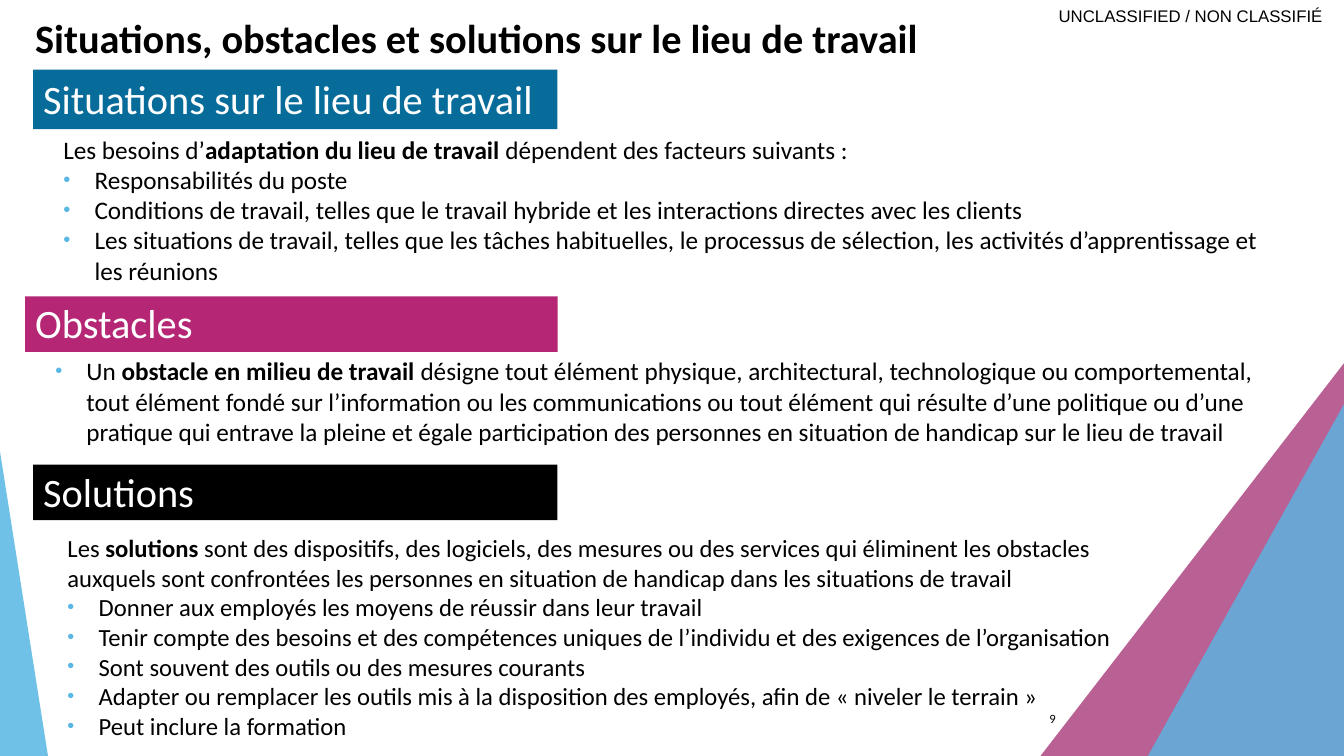
from lxml.etree import SubElement
from pptx import Presentation
from pptx.dml.color import RGBColor
from pptx.enum.shapes import MSO_SHAPE
from pptx.enum.text import MSO_ANCHOR, PP_ALIGN
from pptx.oxml.ns import qn
from pptx.util import Inches, Pt

COLORS = {
    "black": "000000",
    "white": "FFFFFF",
    "sky": "58B7E3",
    "plum": "9E246B",
    "teal": "086C9B",
    "magenta": "B52775",
}

SITUATIONS = [
    (False, [("Les besoins d’", False), ("adaptation du lieu de travail ", True),
             ("dépendent des facteurs suivants :", False)]),
    (True, [("Responsabilités du poste", False)]),
    (True, [("Conditions de travail, telles que le travail hybride et les interactions "
             "directes avec les clients", False)]),
    (True, [("Les situations de travail, telles que les tâches habituelles, le processus de "
             "sélection, les activités d’apprentissage et les réunions", False)]),
]
OBSTACLES = [
    (True, [("Un ", False), ("obstacle en milieu de travail ", True),
            ("désigne tout élément physique, architectural, technologique ou comportemental, "
             "tout élément fondé sur l’information ou les communications ou tout élément qui "
             "résulte d’une politique ou d’une pratique qui entrave la pleine et égale "
             "participation des personnes en situation de handicap sur le lieu de travail",
             False)]),
]
SOLUTIONS = [
    (False, [("Les ", False), ("solutions", True),
             (" sont des dispositifs, des logiciels, des mesures ou des services qui éliminent "
              "les obstacles auxquels sont confrontées les personnes en situation de handicap "
              "dans les situations de travail", False)]),
    (True, [("Donner aux employés les moyens de réussir dans leur travail", False)]),
    (True, [("Tenir compte des besoins et des compétences uniques de l’individu et des "
             "exigences de l’organisation", False)]),
    (True, [("Sont souvent des outils ou des mesures courants", False)]),
    (True, [("Adapter ou remplacer les outils mis à la disposition des employés, afin de "
             "« niveler le terrain »", False)]),
    (True, [("Peut inclure la formation", False)]),
]


def add_run(paragraph, text, size, color="black", bold=False, font="Calibri"):
    """Append one formatted run to a paragraph."""
    run = paragraph.add_run()
    run.text = text
    run.font.name = font
    run.font.size = Pt(size)
    run.font.bold = bold
    run.font.color.rgb = RGBColor.from_string(COLORS[color])


def add_bullet(paragraph):
    """Give a paragraph a hanging sky-blue bullet."""
    properties = paragraph._p.get_or_add_pPr()
    properties.set("marL", str(Inches(0.31)))
    properties.set("indent", str(Inches(-0.31)))
    bullet_color = SubElement(properties, qn("a:buClr"))
    SubElement(bullet_color, qn("a:srgbClr"), val=COLORS["sky"])
    SubElement(properties, qn("a:buSzPct"), val="80000")
    SubElement(properties, qn("a:buFont"), typeface="Arial")
    SubElement(properties, qn("a:buChar"), char="•")


def add_filled(slide, kind, box, color):
    """Draw a flat preset shape without outline."""
    figure = slide.shapes.add_shape(kind, *map(Inches, box))
    figure.shadow.inherit = False
    figure.fill.solid()
    figure.fill.fore_color.rgb = RGBColor.from_string(COLORS[color])
    figure.line.fill.background()
    return figure


def add_corner(slide, box, color, apex, opacity):
    """Draw a translucent decorative triangle."""
    corner = add_filled(slide, MSO_SHAPE.ISOSCELES_TRIANGLE, box, color)
    corner.adjustments[0] = apex
    hue = corner.fill._xPr.find(".//" + qn("a:srgbClr"))
    SubElement(hue, qn("a:alpha"), val=str(opacity * 1000))


def add_banner(slide, box, color, heading, anchor=MSO_ANCHOR.BOTTOM):
    """Draw a coloured section heading."""
    banner = add_filled(slide, MSO_SHAPE.RECTANGLE, box, color)
    frame = banner.text_frame
    frame.word_wrap = True
    frame.vertical_anchor = anchor
    frame.paragraphs[0].alignment = PP_ALIGN.LEFT
    add_run(frame.paragraphs[0], heading, 28.8, "white")


def add_frame(slide, box, anchor=MSO_ANCHOR.TOP):
    """Add a wrapping text box and return its text frame."""
    frame = slide.shapes.add_textbox(*map(Inches, box)).text_frame
    frame.word_wrap = True
    frame.vertical_anchor = anchor
    return frame


def add_label(slide, box, text, size, anchor, align, bold=False, font="Calibri", margin=0.1):
    """Add a single line of text."""
    frame = add_frame(slide, box, anchor)
    frame.margin_left = frame.margin_right = Inches(margin)
    frame.margin_top = frame.margin_bottom = Inches(margin / 2)
    frame.paragraphs[0].alignment = align
    add_run(frame.paragraphs[0], text, size, bold=bold, font=font)


def add_body(slide, box, content, size, before=0):
    """Add the paragraphs of a section, bulleted where asked."""
    frame = add_frame(slide, box)
    for index, (bulleted, runs) in enumerate(content):
        paragraph = frame.add_paragraph() if index else frame.paragraphs[0]
        paragraph.space_before = Pt(0 if index else before)
        if bulleted:
            add_bullet(paragraph)
        for text, bold in runs:
            add_run(paragraph, text, size, bold=bold)


def main():
    """Build and save the slide."""
    deck = Presentation()
    deck.slide_width, deck.slide_height = Inches(13.33), Inches(7.5)
    slide = deck.slides.add_slide(deck.slide_layouts[6])

    add_corner(slide, (10.25, 3.59, 3.09, 4), "plum", 1, 72)
    add_corner(slide, (11.34, 4.01, 1.99, 3.57), "sky", 1, 80)
    add_corner(slide, (0, 4.48, 0.49, 3.11), "sky", 0, 85)

    add_label(slide, (10.1, 0, 3.02, 0.31), "UNCLASSIFIED / NON CLASSIFIÉ", 12,
              MSO_ANCHOR.MIDDLE, PP_ALIGN.RIGHT, font="Arial", margin=0)
    add_label(slide, (0.25, 0.11, 9.29, 0.55),
              "Situations, obstacles et solutions sur le lieu de travail", 28.8,
              MSO_ANCHOR.BOTTOM, PP_ALIGN.LEFT, bold=True)

    add_banner(slide, (0.33, 0.69, 5.2, 0.59), "teal", "Situations sur le lieu de travail",
               MSO_ANCHOR.TOP)
    add_body(slide, (0.53, 1.28, 12.24, 1.66), SITUATIONS, 18, before=10)
    add_banner(slide, (0.25, 2.94, 5.28, 0.55), "magenta", "Obstacles")
    add_body(slide, (0.45, 3.48, 12.24, 1.26), OBSTACLES, 18, before=10)
    add_banner(slide, (0.33, 4.61, 5.2, 0.55), "black", "Solutions")
    add_body(slide, (0.57, 5.24, 10.95, 2.33), SOLUTIONS, 17.6)

    add_label(slide, (9.82, 6.93, 0.75, 0.4), "9", 9, MSO_ANCHOR.MIDDLE, PP_ALIGN.RIGHT)
    deck.save("out.pptx")


if __name__ == "__main__":
    main()
